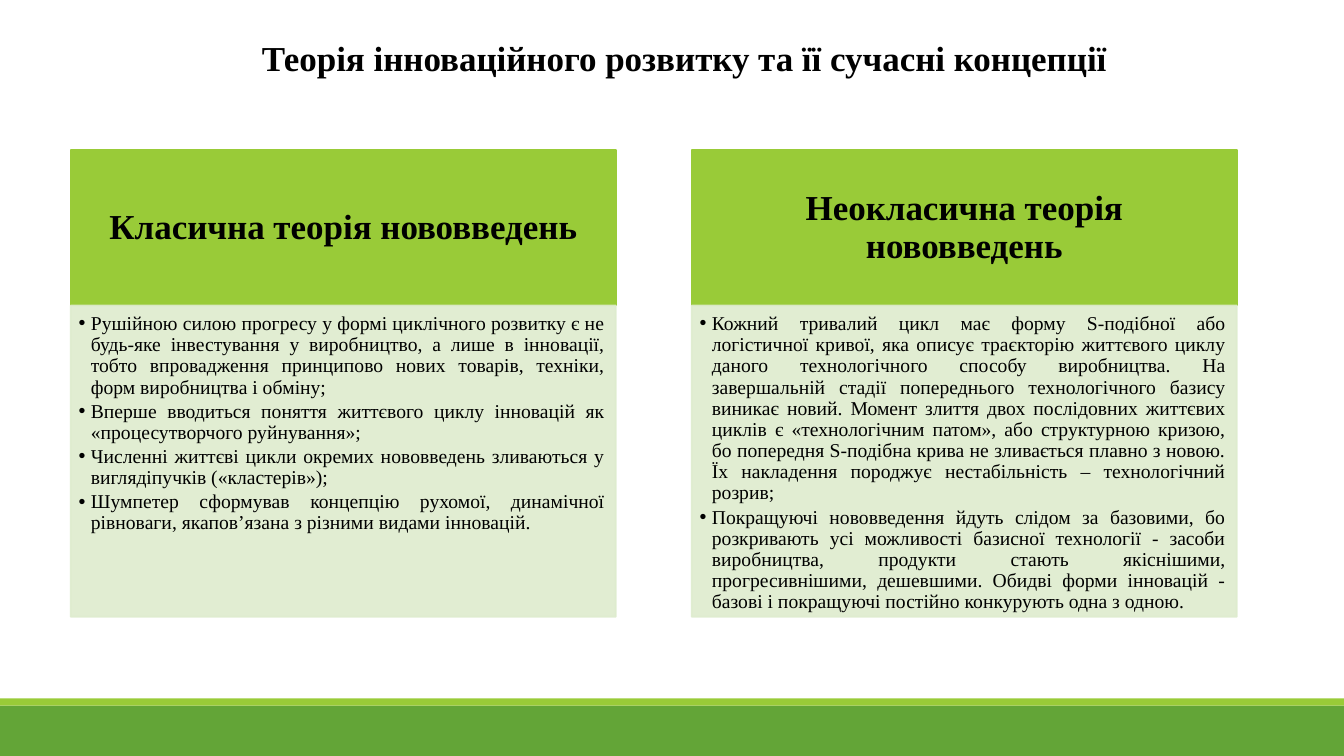
from lxml import etree
from pptx import Presentation
from pptx.dml.color import RGBColor
from pptx.enum import shapes, text
from pptx.oxml.ns import qn
from pptx.util import Cm, Pt

# Content
TITLE = "Теорія інноваційного розвитку та її сучасні концепції"
CARDS = [
    ("Класична теорія нововведень", [
        "Рушійною силою прогресу у формі циклічного розвитку є не будь-яке інвестування у виробництво, а лише в інновації, тобто впровадження принципово нових товарів, техніки, форм виробництва і обміну;",
        "Вперше вводиться поняття життєвого циклу інновацій як «процесутворчого руйнування»;",
        "Численні життєві цикли окремих нововведень зливаються у виглядіпучків («кластерів»);",
        "Шумпетер сформував концепцію рухомої, динамічної рівноваги, якапов’язана з різними видами інновацій.",
    ]),
    ("Неокласична теорія нововведень", [
        "Кожний тривалий цикл має форму S-подібної або логістичної кривої, яка описує траєкторію життєвого циклу даного технологічного способу виробництва. На завершальній стадії попереднього технологічного базису виникає новий. Момент злиття двох послідовних життєвих циклів є «технологічним патом», або структурною кризою, бо попередня S-подібна крива не зливається плавно з новою. Їх накладення породжує нестабільність – технологічний розрив;",
        "Покращуючі нововведення йдуть слідом за базовими, бо розкривають усі можливості базисної технології - засоби виробництва, продукти стають якіснішими, прогресивнішими, дешевшими. Обидві форми інновацій - базові і покращуючі постійно конкурують одна з одною.",
    ]),
]
HEX = {"ink": "000000", "lime": "99CB38", "pale": "DEECCE", "green": "63A537"}
FACE = "Times New Roman"

# Measures in centimetres
WIDE, HIGH = 33.87, 19.05
LEFT, TOP, STEP = 1.78, 3.78, 15.65
CARD_W, HEAD_H, BODY_H = 13.74, 3.92, 7.84
BARS = [("green", 17.78, 1.27), ("lime", 17.6, 0.18)]


def place(shape, x, y, w, h):
    shape.left, shape.top, shape.width, shape.height = map(Cm, (x, y, w, h))


def paint(shape, name, alpha=None):
    shape.fill.solid()
    shape.fill.fore_color.rgb = RGBColor.from_string(HEX[name])
    shape.line.fill.solid()
    shape.line.color.rgb = RGBColor.from_string(HEX[name])
    shape.line.width = Pt(1.25)
    if alpha:
        for color in shape._element.spPr.iter(qn("a:srgbClr")):
            etree.SubElement(color, qn("a:alpha"), val=str(alpha * 1000))


def write(shape, lines, size, bold, align, anchor, pads, bullet=False):
    frame = shape.text_frame
    frame.text = "\n".join(lines)
    frame.auto_size = text.MSO_AUTO_SIZE.NONE
    frame.word_wrap = True
    frame.vertical_anchor = anchor
    (frame.margin_left, frame.margin_top,
     frame.margin_right, frame.margin_bottom) = map(Cm, pads)
    for par in frame.paragraphs:
        par.alignment = align
        par.line_spacing = 0.9
        par.space_before = Pt(0)
        if bullet:
            par.level = 1
            par.space_after = Pt(2.1)
            prop = par._p.get_or_add_pPr()
            prop.set("marL", str(Cm(0.31)))
            prop.set("indent", str(Cm(-0.31)))
            etree.SubElement(prop, qn("a:buChar"), char="•")
        font = par.font
        font.name, font.size, font.bold = FACE, Pt(size), bold
        font.color.rgb = RGBColor.from_string(HEX["ink"])


deck = Presentation()
deck.slide_width, deck.slide_height = Cm(WIDE), Cm(HIGH)
slide = deck.slides.add_slide(deck.slide_layouts.get_by_name("Comparison"))
title, *slots = slide.placeholders

# Bars along the foot
for name, y, h in BARS:
    bar = slide.shapes.add_shape(
        shapes.MSO_SHAPE.RECTANGLE, 0, Cm(y), Cm(WIDE), Cm(h))
    bar.shadow.inherit = False
    paint(bar, name)
    bar.line.fill.background()

# Title
place(title, 6.35, 0.79, 22.28, 1.32)
write(title, [TITLE], 25, True, text.PP_ALIGN.LEFT,
      text.MSO_ANCHOR.TOP, (0.25, 0.13, 0.25, 0.13))
title.text_frame.paragraphs[0].line_spacing = 1.0
title.text_frame.word_wrap = False

# Two cards: heading above its list
for i, (name, points) in enumerate(CARDS):
    head, body = slots[2 * i:2 * i + 2]
    x = LEFT + i * STEP
    place(head, x, TOP, CARD_W, HEAD_H)
    paint(head, "lime")
    write(head, [name], 25, True, text.PP_ALIGN.CENTER,
          text.MSO_ANCHOR.MIDDLE, (0.48, 0.28, 0.48, 0.28))
    place(body, x, TOP + HEAD_H, CARD_W, BODY_H)
    paint(body, "pale", 90)
    write(body, points, 14, False, text.PP_ALIGN.JUSTIFY,
          text.MSO_ANCHOR.TOP, (0.2, 0.2, 0.28, 0.3), bullet=True)

deck.save("out.pptx")
